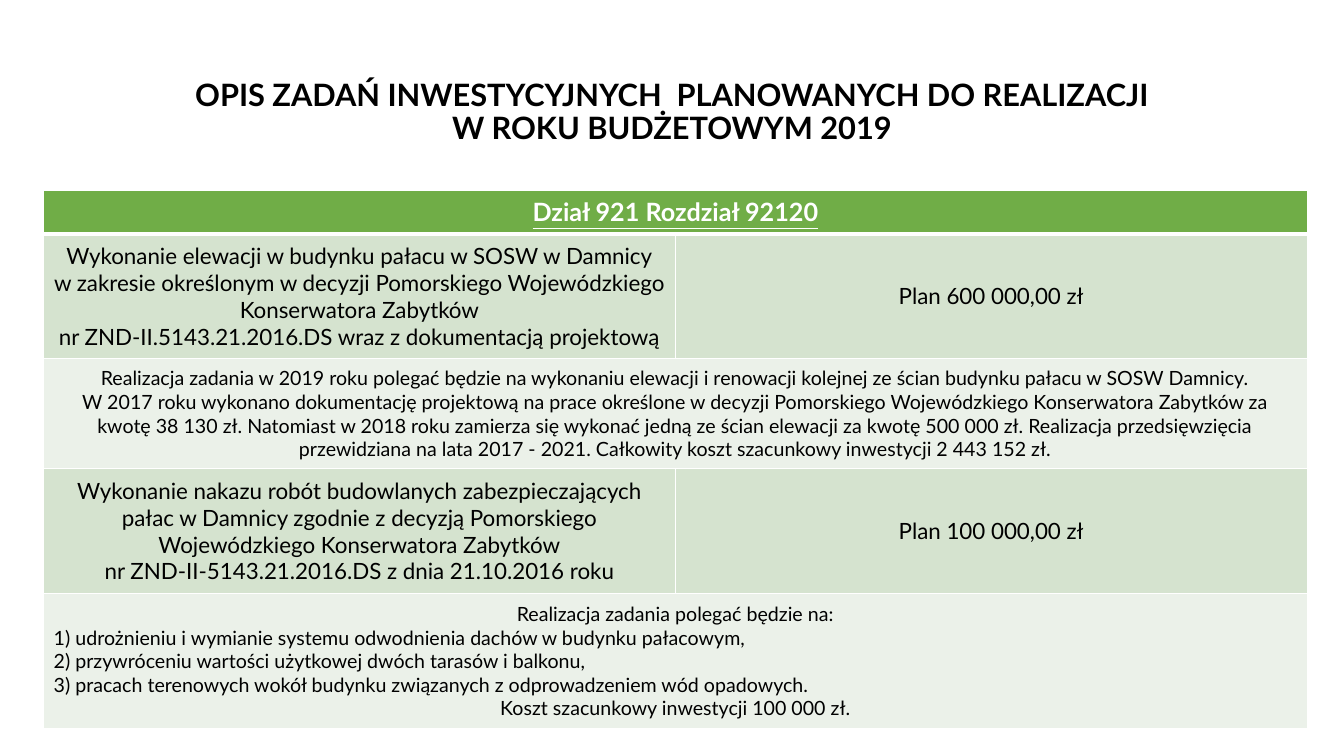
"""Builds the slide on the 2019 investment tasks, sections 921 and 92120."""
import lxml.etree
import pptx
import pptx.dml.color
import pptx.enum.text
import pptx.oxml.ns
import pptx.util

Cm, Pt = pptx.util.Cm, pptx.util.Pt
ALIGN = pptx.enum.text.PP_ALIGN
MIDDLE = pptx.enum.text.MSO_ANCHOR.MIDDLE

FONT = "Lato"
COLORS = {"text": "000000", "white": "FFFFFF", "header": "70AD47",
          "task": "D5E3CF", "detail": "EBF1E9"}

TITLE = "OPIS ZADAŃ INWESTYCYJNYCH  PLANOWANYCH DO REALIZACJI\nW ROKU BUDŻETOWYM 2019"

ROWS = [
    ("header", 1.09, [["Dział 921 Rozdział 92120"]]),
    ("task", 3.15, [
        ["Wykonanie elewacji w budynku pałacu w SOSW w Damnicy",
         "w zakresie określonym w decyzji Pomorskiego Wojewódzkiego Konserwatora Zabytków",
         "nr ZND-II.5143.21.2016.DS wraz z dokumentacją projektową"],
        ["Plan 600 000,00 zł"]]),
    ("detail", 2.77, [
        ["Realizacja zadania w 2019 roku polegać będzie na wykonaniu elewacji i renowacji "
         "kolejnej ze ścian budynku pałacu w SOSW Damnicy.",
         "W 2017 roku wykonano dokumentację projektową na prace określone w decyzji "
         "Pomorskiego Wojewódzkiego Konserwatora Zabytków za kwotę 38 130 zł. Natomiast "
         "w 2018 roku zamierza się wykonać jedną ze ścian elewacji za kwotę 500 000 zł. "
         "Realizacja przedsięwzięcia przewidziana na lata 2017 - 2021. Całkowity koszt "
         "szacunkowy inwestycji 2 443 152 zł."]]),
    ("task", 3.15, [
        ["Wykonanie nakazu robót budowlanych zabezpieczających pałac w Damnicy zgodnie "
         "z decyzją Pomorskiego Wojewódzkiego Konserwatora Zabytków",
         "nr ZND-II-5143.21.2016.DS z dnia 21.10.2016 roku"],
        ["Plan 100 000,00 zł"]]),
    ("detail", 3.4, [
        ["Realizacja zadania polegać będzie na:",
         "1) udrożnieniu i wymianie systemu odwodnienia dachów w budynku pałacowym,",
         "2) przywróceniu wartości użytkowej dwóch tarasów i balkonu,",
         "3) pracach terenowych wokół budynku związanych z odprowadzeniem wód opadowych.",
         "Koszt szacunkowy inwestycji 100 000 zł."]]),
]
SIZES = {"header": 18, "task": 16, "detail": 14}
TABLE_LEFT, TABLE_TOP, TABLE_WIDTH = 1.1, 4.8, 31.84


def format_paragraph(paragraph, size, color, bold, align):
    paragraph.alignment = align
    for run in paragraph.runs:
        run.font.name = FONT
        run.font.size = Pt(size)
        run.font.bold = bold
        run.font.color.rgb = pptx.dml.color.RGBColor.from_string(COLORS[color])


def add_borders(cell, bottom_width):
    qn = pptx.oxml.ns.qn
    properties = cell._tc.get_or_add_tcPr()
    for position, side in enumerate("LRTB"):
        width = bottom_width if side == "B" else 1
        line = lxml.etree.Element(qn(f"a:ln{side}"), w=str(Pt(width)))
        fill = lxml.etree.SubElement(line, qn("a:solidFill"))
        lxml.etree.SubElement(fill, qn("a:srgbClr"), val=COLORS["white"])
        properties.insert(position, line)


def add_title(slide):
    title = slide.shapes.title
    title.left, title.top, title.width, title.height = Cm(2.33), Cm(1.01), Cm(29.21), Cm(3.68)
    frame = title.text_frame
    frame.auto_size = pptx.enum.text.MSO_AUTO_SIZE.NONE
    frame.vertical_anchor = MIDDLE
    heading = frame.paragraphs[0]
    heading.text = TITLE
    heading.line_spacing = 0.9
    format_paragraph(heading, 22, "text", True, ALIGN.CENTER)


def fill_cell(cell, kind, lines):
    is_header = kind == "header"
    cell.text_frame.text = "\n".join(lines)
    cell.vertical_anchor = MIDDLE
    for paragraph in cell.text_frame.paragraphs:
        numbered = paragraph.text[1:2] == ")"
        format_paragraph(paragraph, SIZES[kind], "white" if is_header else "text",
                         is_header, ALIGN.LEFT if numbered else ALIGN.CENTER)
        for run in paragraph.runs:
            run.font.underline = is_header


def add_tasks(slide):
    height = sum(row_height for _, row_height, _ in ROWS)
    tasks = slide.shapes.add_table(len(ROWS), 2, Cm(TABLE_LEFT), Cm(TABLE_TOP),
                                   Cm(TABLE_WIDTH), Cm(height)).table
    tasks.horz_banding = False
    for column in tasks.columns:
        column.width = Cm(TABLE_WIDTH / 2)
    for row_index, (kind, row_height, texts) in enumerate(ROWS):
        tasks.rows[row_index].height = Cm(row_height)
        left, right = tasks.cell(row_index, 0), tasks.cell(row_index, 1)
        for cell in (left, right):
            cell.fill.solid()
            cell.fill.fore_color.rgb = pptx.dml.color.RGBColor.from_string(COLORS[kind])
            add_borders(cell, 3 if kind == "header" else 1)
        if len(texts) == 1:
            left.merge(right)
        for cell, lines in zip((left, right), texts):
            fill_cell(cell, kind, lines)


def main():
    presentation = pptx.Presentation()
    presentation.slide_width, presentation.slide_height = Cm(33.87), Cm(19.05)
    slide = presentation.slides.add_slide(presentation.slide_layouts[5])
    add_title(slide)
    add_tasks(slide)
    presentation.save("out.pptx")


if __name__ == "__main__":
    main()
